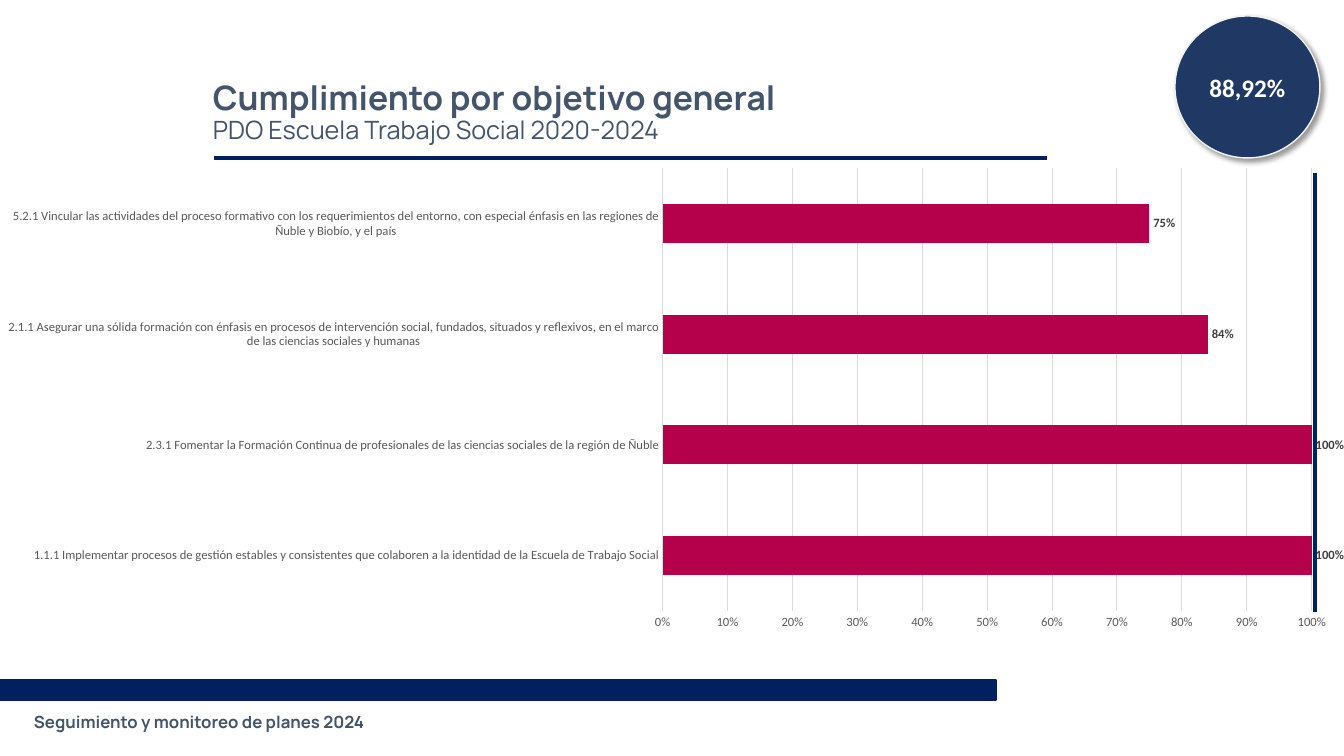
from pptx import Presentation
from pptx.chart.data import CategoryChartData
from pptx.dml.color import RGBColor
from pptx.enum.chart import XL_CHART_TYPE as ChartType, XL_LABEL_POSITION as LabelPos
from pptx.enum.chart import XL_TICK_MARK as Tick
from pptx.enum.shapes import MSO_CONNECTOR as Connector, MSO_SHAPE as Shape
from pptx.enum.text import MSO_ANCHOR as Anchor, PP_ALIGN as Align
from pptx.oxml import parse_xml
from pptx.oxml.ns import nsdecls, qn
from pptx.util import Pt

# Content
HEADING = [("Cumplimiento por objetivo general", 24, True),
           ("PDO Escuela Trabajo Social 2020-2024", 18, False)]
FOOTER = "Seguimiento y monitoreo de planes 2024"
OVERALL = "88,92%"
OBJECTIVES = [
    ("1.1.1 Implementar procesos de gestión estables y consistentes que colaboren "
     "a la identidad de la Escuela de Trabajo Social", 1),
    ("2.3.1 Fomentar la Formación Continua de profesionales de las ciencias sociales "
     "de la región de Ñuble", 1),
    ("2.1.1 Asegurar una sólida formación con énfasis en procesos de intervención social, "
     "fundados, situados y reflexivos, en el marco de las ciencias sociales y humanas", 0.84),
    ("5.2.1 Vincular las actividades del proceso formativo con los requerimientos del entorno, "
     "con especial énfasis en las regiones de Ñuble y Biobío, y el país", 0.75),
]
PLOT = {"x": 0.495, "y": 0.021, "w": 0.485, "h": 0.909}
NAVY, SLATE, CRIMSON, GRID = "002060", "44546A", "B5004B", "D9D9D9"
EMU_PER_PX = 914400 / 100.8


def px(*lengths):
    return [round(length * EMU_PER_PX) for length in lengths]


def color(hex_code):
    return RGBColor.from_string(hex_code)


def style(font, name, size, hex_code, bold=False):
    font.name, font.size, font.bold = name, Pt(size), bold
    font.color.rgb = color(hex_code)


def stroke(line, hex_code, width):
    line.color.rgb = color(hex_code)
    line.width = Pt(width)


def add_block(kind, box, fill, outline=None):
    block = slide.shapes.add_shape(kind, *px(*box))
    block.shadow.inherit = False
    block.fill.solid()
    block.fill.fore_color.rgb = color(fill)
    if outline:
        stroke(block.line, outline, 1)
    else:
        block.line.fill.background()
    return block


def add_rule(*ends):
    rule = slide.shapes.add_connector(Connector.STRAIGHT, *px(*ends))
    stroke(rule.line, NAVY, 2.25)
    rule._element.spPr.append(parse_xml(f"<a:effectLst {nsdecls('a')}/>"))


def write(block, text, align, *font):
    frame = block.text_frame
    frame.word_wrap = True
    frame.vertical_anchor = Anchor.MIDDLE
    frame.text = text
    frame.paragraphs[0].alignment = align
    style(frame.paragraphs[0].runs[0].font, *font)


prs = Presentation()
prs.slide_width, prs.slide_height = px(1344, 756)
slide = prs.slides.add_slide(prs.slide_layouts[6])

# Footer
add_block(Shape.RECTANGLE, (0, 680, 996, 20), NAVY, NAVY)
footer = add_block(Shape.RECTANGLE, (24, 703, 410, 38), "FFFFFF")
write(footer, FOOTER, Align.LEFT, "Manrope", 12, SLATE, True)

# Heading
add_rule(214, 158, 1047, 158)
heading = slide.shapes.add_textbox(*px(203, 40, 1049, 146)).text_frame
heading.word_wrap = True
heading.vertical_anchor = Anchor.MIDDLE
heading.text = "\n".join(text for text, _, _ in HEADING)
for paragraph, (_, size, bold) in zip(heading.paragraphs, HEADING):
    paragraph.line_spacing = 0.9
    style(paragraph.runs[0].font, "Manrope", size, SLATE, bold)

# Progress by objective
progress = CategoryChartData(number_format="0%")
progress.categories = [name for name, _ in OBJECTIVES]
progress.add_series("Cumplimiento", [value for _, value in OBJECTIVES])
chart = slide.shapes.add_chart(ChartType.BAR_CLUSTERED, *px(0, 158, 1344, 487), progress).chart
chart.has_legend = chart.has_title = False
style(chart.font, "Calibri", 10, "000000")

objective_axis, percent_axis = chart.category_axis, chart.value_axis
for axis in (objective_axis, percent_axis):
    axis.major_tick_mark = axis.minor_tick_mark = Tick.NONE
    style(axis.tick_labels.font, "Calibri", 9, "595959")
stroke(objective_axis.format.line, GRID, 0.75)
percent_axis.format.line.fill.background()
percent_axis.minimum_scale, percent_axis.maximum_scale = 0, 1
percent_axis.major_unit = 0.1
percent_axis.tick_labels.number_format = "0%"
percent_axis.tick_labels.number_format_is_linked = False
stroke(percent_axis.major_gridlines.format.line, GRID, 0.75)

bars = chart.plots[0]
bars.gap_width = 182
bars.vary_by_categories = False
bars.series[0].format.fill.solid()
bars.series[0].format.fill.fore_color.rgb = color(CRIMSON)
labels = bars.series[0].data_labels
labels.show_value = True
labels.position = LabelPos.OUTSIDE_END
labels.number_format, labels.number_format_is_linked = "0%", False
style(labels.font, "Calibri", 9, "404040", True)

# Fixed inner plot area
plot_area = chart._chartSpace.chart.plotArea
for layout in plot_area.findall(qn("c:layout")):
    plot_area.remove(layout)
modes = "".join(f'<c:{side}Mode val="edge"/>' for side in "xy")
sizes = "".join(f'<c:{side} val="{share}"/>' for side, share in PLOT.items())
plot_area.insert(0, parse_xml(
    f'<c:layout {nsdecls("c")}><c:manualLayout><c:layoutTarget val="inner"/>'
    f"{modes}{sizes}</c:manualLayout></c:layout>"))

add_rule(1315, 173, 1315, 612)

# Overall result
overall = add_block(Shape.OVAL, (1175, 16, 145, 142), "203864", "F2F2F2")
write(overall, OVERALL, Align.CENTER, "Calibri", 18, "FFFFFF", True)
overall._element.spPr.find(qn("a:effectLst")).append(parse_xml(
    f'<a:outerShdw {nsdecls("a")} blurRad="{Pt(4)}" dist="{Pt(3)}" dir="2700000" '
    'algn="tl" rotWithShape="0"><a:srgbClr val="000000"><a:alpha val="40000"/>'
    "</a:srgbClr></a:outerShdw>"))

prs.save("out.pptx")
